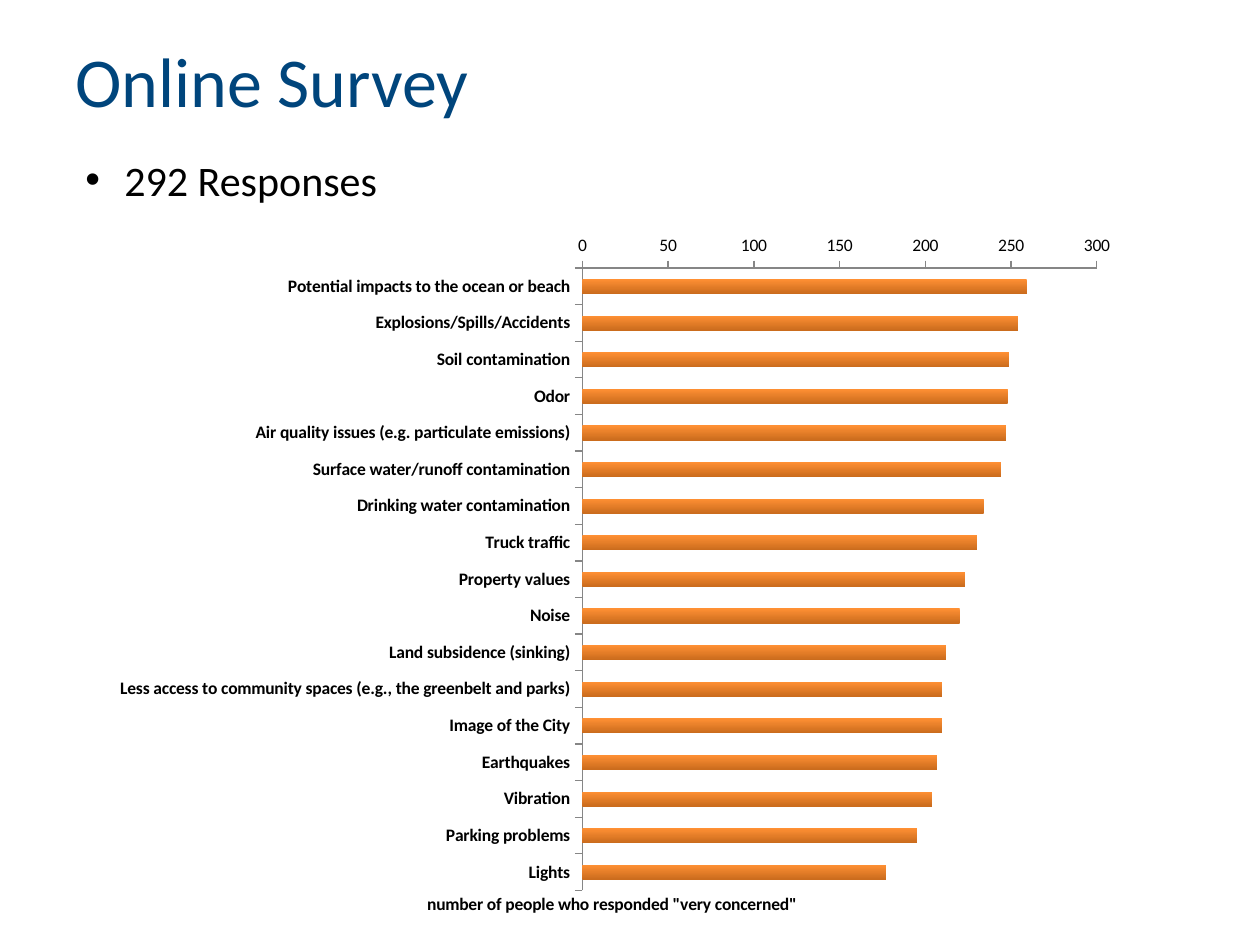
from lxml import etree
from pptx import Presentation
from pptx import util as u
from pptx.chart import data
from pptx.dml.color import RGBColor
from pptx.enum import chart as c, text
from pptx.oxml import ns

SCALE = 914400 / 126
FONT = "Calibri"
COLORS = {
    "title": "00457C",
    "text": "000000",
    "bar_top": "FF9034",
    "bar_bottom": "CB6C1D",
    "axis": "868686",
}
CONCERNS = {
    "Potential impacts to the ocean or beach": 259,
    "Explosions/Spills/Accidents": 254,
    "Soil contamination": 249,
    "Odor": 248,
    "Air quality issues (e.g. particulate emissions)": 247,
    "Surface water/runoff contamination": 244,
    "Drinking water contamination": 234,
    "Truck traffic": 230,
    "Property values": 223,
    "Noise": 220,
    "Land subsidence (sinking)": 212,
    "Less access to community spaces (e.g., the greenbelt and parks)": 210,
    "Image of the City": 210,
    "Earthquakes": 207,
    "Vibration": 204,
    "Parking problems": 195,
    "Lights": 177,
}


def px(length):
    return u.Emu(round(length * SCALE))


def color(name):
    return RGBColor.from_string(COLORS[name])


def style_font(font, size, name, bold=False):
    font.name = FONT
    font.size = u.Pt(size)
    font.bold = bold
    font.color.rgb = color(name)


def add_text(slide, box, words, size, name, bullet=None):
    shape = slide.shapes.add_textbox(*map(px, box))
    frame = shape.text_frame
    frame.word_wrap = True
    frame.vertical_anchor = text.MSO_ANCHOR.MIDDLE
    paragraph = frame.paragraphs[0]
    run = paragraph.add_run()
    run.text = words
    style_font(run.font, size, name)
    if bullet:
        properties = paragraph._p.get_or_add_pPr()
        properties.set("marL", str(px(39)))
        properties.set("indent", str(-px(39)))
        etree.SubElement(properties, ns.qn("a:buFont")).set("typeface", "Arial")
        etree.SubElement(properties, ns.qn("a:buChar")).set("char", bullet)


def set_layout(element, index, **values):
    for old in element.findall(ns.qn("c:layout")):
        element.remove(old)
    layout = etree.Element(ns.qn("c:layout"))
    manual = etree.SubElement(layout, ns.qn("c:manualLayout"))
    for tag, value in values.items():
        etree.SubElement(manual, ns.qn(f"c:{tag}")).set("val", str(value))
    element.insert(index, layout)


def style_axis(axis, bold):
    axis.has_major_gridlines = False
    axis.major_tick_mark = c.XL_TICK_MARK.OUTSIDE
    axis.minor_tick_mark = c.XL_TICK_MARK.NONE
    axis.format.line.color.rgb = color("axis")
    axis.format.line.width = u.Pt(0.75)
    style_font(axis.tick_labels.font, 10, "text", bold)


def add_axis_title(axis, words):
    title = axis.axis_title
    run = title.text_frame.paragraphs[0].add_run()
    run.text = words
    style_font(run.font, 10, "text", True)
    title.text_frame._txBody.bodyPr.set("rot", "0")
    set_layout(title._element, 1, xMode="edge", yMode="edge", x=0.31, y=0.96)


def add_bar_chart(slide, box, concerns):
    chart_data = data.CategoryChartData(number_format="0")
    chart_data.categories = list(concerns)
    chart_data.add_series("Series 1", list(concerns.values()))
    frame = slide.shapes.add_chart(
        c.XL_CHART_TYPE.BAR_CLUSTERED, *map(px, box), chart_data
    )
    chart = frame.chart
    style_font(chart.font, 10, "text")
    chart.has_legend = False
    chart.has_title = False
    set_layout(
        chart._chartSpace.chart.plotArea, 0, layoutTarget="inner",
        xMode="edge", yMode="edge", x=0.464, y=0.101, w=0.5, h=0.86,
    )
    plot = chart.plots[0]
    plot.gap_width = 150
    plot.vary_by_categories = False
    fill = plot.series[0].format.fill
    fill.gradient()
    fill.gradient_angle = 270
    for stop, name in zip(fill.gradient_stops, ("bar_top", "bar_bottom")):
        stop.color.rgb = color(name)
    style_axis(chart.category_axis, True)
    chart.category_axis.reverse_order = True
    style_axis(chart.value_axis, False)
    chart.value_axis.minimum_scale = 0
    chart.value_axis.maximum_scale = 300
    chart.value_axis.major_unit = 50
    add_axis_title(
        chart.value_axis, 'number of people who responded "very concerned"'
    )


def main():
    presentation = Presentation()
    presentation.slide_width = px(1260)
    presentation.slide_height = px(945)
    slide = presentation.slides.add_slide(presentation.slide_layouts[6])
    add_text(slide, (63, 0, 1134, 158), "Online Survey", 40, "title")
    add_bar_chart(slide, (105, 195, 1029, 725), CONCERNS)
    add_text(slide, (73, 148, 347, 63), "292 Responses", 24, "text", "•")
    presentation.save("out.pptx")


if __name__ == "__main__":
    main()
